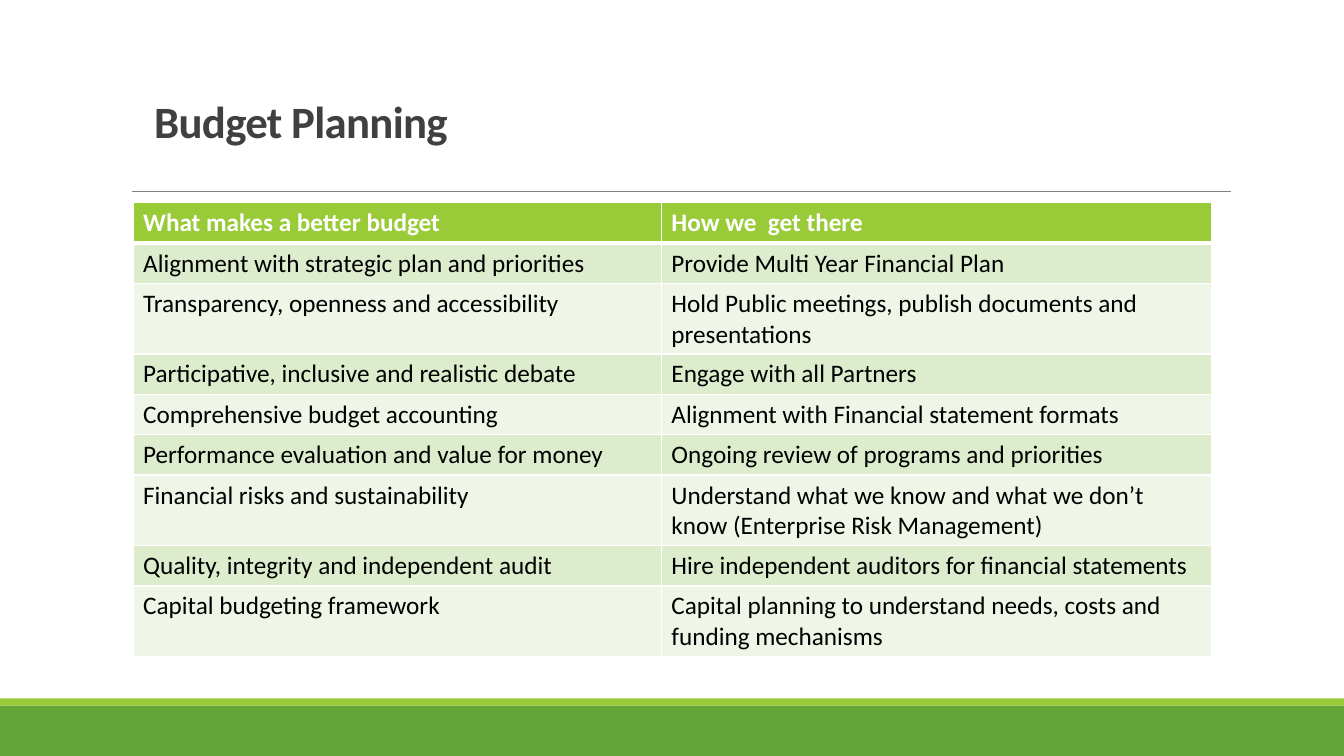
from dataclasses import dataclass

from lxml import etree
from pptx import Presentation
from pptx import util as u
from pptx.dml.color import RGBColor
from pptx.enum import shapes, text
from pptx.oxml import ns


@dataclass(frozen=True)
class Theme:
    font: str = "Calibri"
    title: str = "404040"
    ink: str = "000000"
    white: str = "FFFFFF"
    rule: str = "808080"
    green: str = "63A537"
    lime: str = "99CB38"
    bands: tuple = ("DEECCE", "EFF6E8")
    head_size: int = 32
    cell_size: int = 18


T = Theme()

HEADS = ("What makes a better budget", "How we  get there")
GOALS = (
    ("Alignment with strategic plan and priorities",
     "Provide Multi Year Financial Plan"),
    ("Transparency, openness and accessibility",
     "Hold Public meetings, publish documents and presentations"),
    ("Participative, inclusive and realistic debate",
     "Engage with all Partners"),
    ("Comprehensive budget accounting",
     "Alignment with Financial statement formats"),
    ("Performance evaluation and value for money",
     "Ongoing review of programs and priorities"),
    ("Financial risks and sustainability",
     "Understand what we know and what we don’t know "
     "(Enterprise Risk Management)"),
    ("Quality, integrity and independent audit",
     "Hire independent auditors for financial statements"),
    ("Capital budgeting framework",
     "Capital planning to understand needs, costs and funding mechanisms"),
)


def color(code):
    return RGBColor.from_string(code)


def add_run(para, words, size, code, bold=False):
    run = para.add_run()
    run.text = words
    font = run.font
    font.name, font.size, font.bold = T.font, u.Pt(size), bold
    font.color.rgb = color(code)
    return run


def add_band(slide, top, height, code):
    band = slide.shapes.add_shape(
        shapes.MSO_SHAPE.RECTANGLE, 0, u.Inches(top),
        u.Inches(13.33), u.Inches(height))
    band.shadow.inherit = False
    band.fill.solid()
    band.fill.fore_color.rgb = color(code)
    band.line.fill.background()


def add_rule(slide, left, right, top):
    rule = slide.shapes.add_connector(
        shapes.MSO_CONNECTOR.STRAIGHT, u.Inches(left), u.Inches(top),
        u.Inches(right), u.Inches(top))
    rule.line.color.rgb = color(T.rule)
    rule.line.width = u.Pt(0.5)
    etree.SubElement(rule._element.spPr, ns.qn("a:effectLst"))


def add_title(slide, words):
    box = slide.shapes.add_textbox(
        u.Inches(1.43), u.Inches(0.69), u.Inches(7.62), u.Inches(0.82))
    frame = box.text_frame
    frame.word_wrap = True
    frame.vertical_anchor = text.MSO_ANCHOR.BOTTOM
    para = frame.paragraphs[0]
    para.line_spacing = 0.85
    run = add_run(para, words, T.head_size, T.title, True)
    run._r.get_or_add_rPr().set("spc", "-50")


def add_edge(cell, side, width):
    edge = etree.SubElement(
        cell._tc.get_or_add_tcPr(), ns.qn(f"a:ln{side}"), w=str(u.Pt(width)))
    fill = etree.SubElement(edge, ns.qn("a:solidFill"))
    etree.SubElement(fill, ns.qn("a:srgbClr"), val=T.white)


def fill_cell(cell, words, row):
    head = row == 0
    # Edges come before the fill in the cell properties
    for side in "LRTB":
        heavy = (head and side == "B") or (row == 1 and side == "T")
        add_edge(cell, side, 3 if heavy else 1)
    cell.fill.solid()
    cell.fill.fore_color.rgb = color(T.lime if head else T.bands[(row - 1) % 2])
    add_run(cell.text_frame.paragraphs[0], words, T.cell_size,
            T.white if head else T.ink, head)


def add_grid(slide, rows):
    grid = slide.shapes.add_table(
        len(rows), len(HEADS), u.Inches(1.32), u.Inches(2.01),
        u.Inches(10.7), u.Inches(4.5)).table
    for col, width in zip(grid.columns, (5.24, 5.46)):
        col.width = u.Inches(width)
    for i, row in enumerate(rows):
        grid.rows[i].height = u.Inches(0.38 if i else 0.34)
        for j, words in enumerate(row):
            fill_cell(grid.cell(i, j), words, i)


def main():
    deck = Presentation()
    deck.slide_width, deck.slide_height = u.Inches(13.33), u.Inches(7.5)
    slide = deck.slides.add_slide(deck.slide_layouts[6])

    # Footer bands
    add_band(slide, 7, 0.5, T.green)
    add_band(slide, 6.93, 0.07, T.lime)

    # Heading
    add_rule(slide, 1.31, 12.21, 1.9)
    add_title(slide, "Budget Planning")

    # Goals and actions
    add_grid(slide, (HEADS, *GOALS))

    deck.save("out.pptx")


if __name__ == "__main__":
    main()
